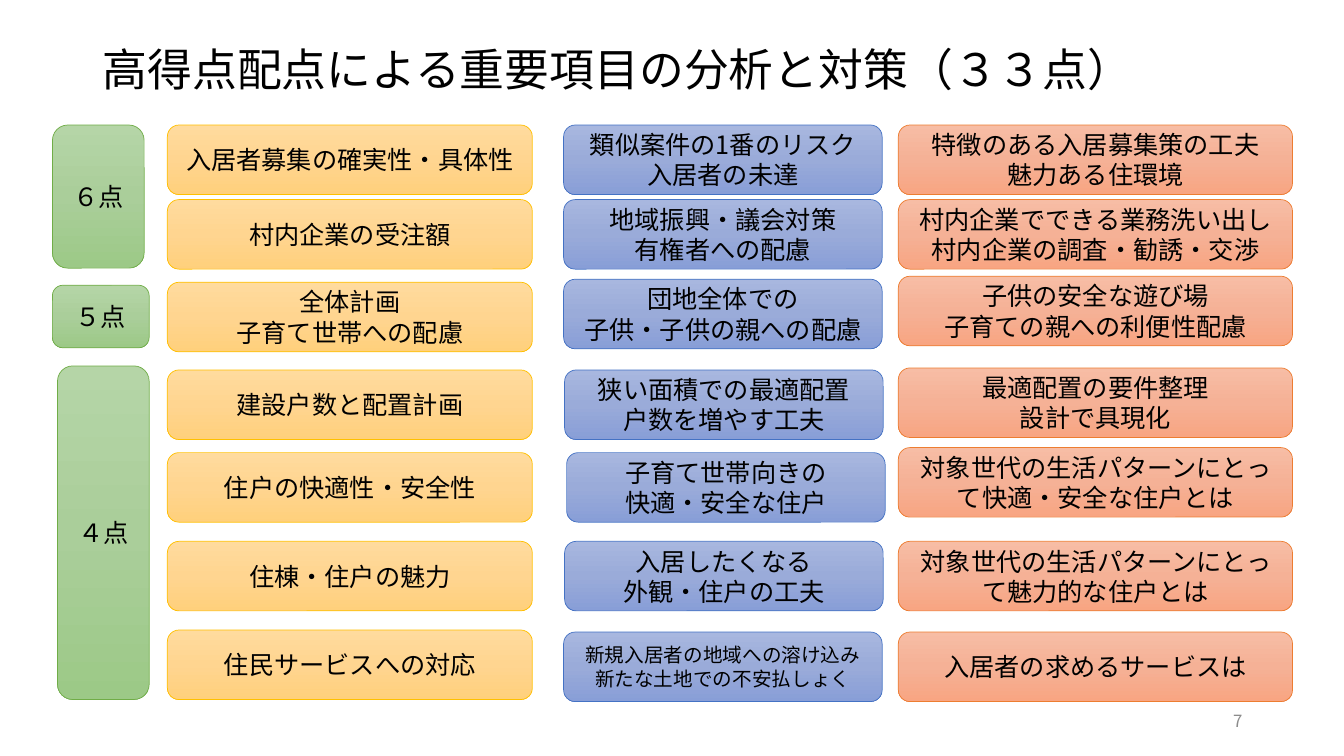
"""Build a slide of key scoring items, their risks and the measures for each."""
from copy import deepcopy
from pptx import Presentation
from pptx import util as u
from pptx.dml.color import RGBColor
from pptx.enum import shapes, text
from pptx.oxml.ns import qn
from lxml import etree

FONT = "Noto Sans CJK JP"
HUES = {
    "black": "000000",
    "gray": "8C8C8C",
    "green": ("B5D5A7", "AACE9A", "9CC987", "70AD47"),
    "gold": ("FFDB9E", "FFD590", "FFD07C", "FFC000"),
    "blue": ("A8B7DF", "9AABD9", "889ED7", "4472C4"),
    "coral": ("F7BDA5", "F5B196", "F8A582", "ED7D31"),
}


def write(shape, words, size, hue, align, pitch):
    frame = shape.text_frame
    frame.word_wrap = True
    frame.vertical_anchor = text.MSO_ANCHOR.MIDDLE
    for i, line in enumerate(words.split("\n")):
        para = frame.add_paragraph() if i else frame.paragraphs[0]
        para.alignment = align
        para.line_spacing = pitch
        run = para.add_run()
        run.text = line
        run.font.size = u.Pt(size)
        run.font.name = FONT
        run.font.color.rgb = RGBColor.from_string(HUES[hue])
        etree.SubElement(run.font._element, qn("a:ea"), typeface=FONT)


def card(left, top, width, height, hue, words, size=18):
    box = slide.shapes.add_shape(
        shapes.MSO_SHAPE.ROUNDED_RECTANGLE,
        u.Inches(left), u.Inches(top), u.Inches(width), u.Inches(height))
    box.shadow.inherit = False
    box.fill.gradient()
    box.fill.gradient_angle = 270
    stops = box._element.spPr.find(".//" + qn("a:gsLst"))
    stops.insert(1, deepcopy(stops[0]))
    for stop, place, tint in zip(box.fill.gradient_stops, (0, 0.5, 1), HUES[hue]):
        stop.position = place
        stop.color.rgb = RGBColor.from_string(tint)
    box.line.color.rgb = RGBColor.from_string(HUES[hue][3])
    box.line.width = u.Pt(0.5)
    write(box, words, size, "black", text.PP_ALIGN.CENTER, u.Pt(size * 1.2))


deck = Presentation()
deck.slide_width = u.Inches(13.33)
deck.slide_height = u.Inches(7.5)
slide = deck.slides.add_slide(deck.slide_layouts[6])

title = slide.shapes.add_textbox(u.Inches(0.92), u.Inches(0.4), u.Inches(11.5), u.Inches(0.62))
write(title, "高得点配点による重要項目の分析と対策（３３点）", 32, "black", text.PP_ALIGN.LEFT, 0.9)
page = slide.shapes.add_textbox(u.Inches(9.42), u.Inches(6.95), u.Inches(3), u.Inches(0.4))
write(page, "7", 12, "gray", text.PP_ALIGN.RIGHT, 1.0)

scores = [
    (0.52, 1.24, 0.91, 1.42, "６点"),
    (0.52, 2.83, 0.96, 0.62, "５点"),
    (0.57, 3.63, 0.91, 3.31, "４点"),
]
for left, top, width, height, words in scores:
    card(left, top, width, height, "green", words)

items = [
    (1.24, "入居者募集の確実性・具体性"),
    (1.98, "村内企業の受注額"),
    (2.8, "全体計画\n子育て世帯への配慮"),
    (3.67, "建設戸数と配置計画"),
    (4.49, "住戸の快適性・安全性"),
    (5.37, "住棟・住戸の魅力"),
    (6.25, "住民サービスへの対応"),
]
for top, words in items:
    card(1.66, top, 3.62, 0.69, "gold", words)

risks = [
    (5.59, 1.24, 18, "類似案件の1番のリスク\n入居者の未達"),
    (5.59, 1.98, 18, "地域振興・議会対策\n有権者への配慮"),
    (5.59, 2.77, 18, "団地全体での\n子供・子供の親への配慮"),
    (5.6, 3.67, 18, "狭い面積での最適配置\n戸数を増やす工夫"),
    (5.62, 4.49, 18, "子育て世帯向きの\n快適・安全な住戸"),
    (5.6, 5.37, 18, "入居したくなる\n外観・住戸の工夫"),
    (5.59, 6.27, 14, "新規入居者の地域への溶け込み\n新たな土地での不安払しょく"),
]
for left, top, size, words in risks:
    card(left, top, 3.16, 0.69, "blue", words, size)

plans = [
    (1.24, "特徴のある入居募集策の工夫\n魅力ある住環境"),
    (1.98, "村内企業でできる業務洗い出し\n村内企業の調査・勧誘・交渉"),
    (2.74, "子供の安全な遊び場\n子育ての親への利便性配慮"),
    (3.65, "最適配置の要件整理\n設計で具現化"),
    (4.44, "対象世代の生活パターンにとって快適・安全な住戸とは"),
    (5.37, "対象世代の生活パターンにとって魅力的な住戸とは"),
    (6.27, "入居者の求めるサービスは"),
]
for top, words in plans:
    card(8.91, top, 3.91, 0.69, "coral", words)

deck.save("out.pptx")
